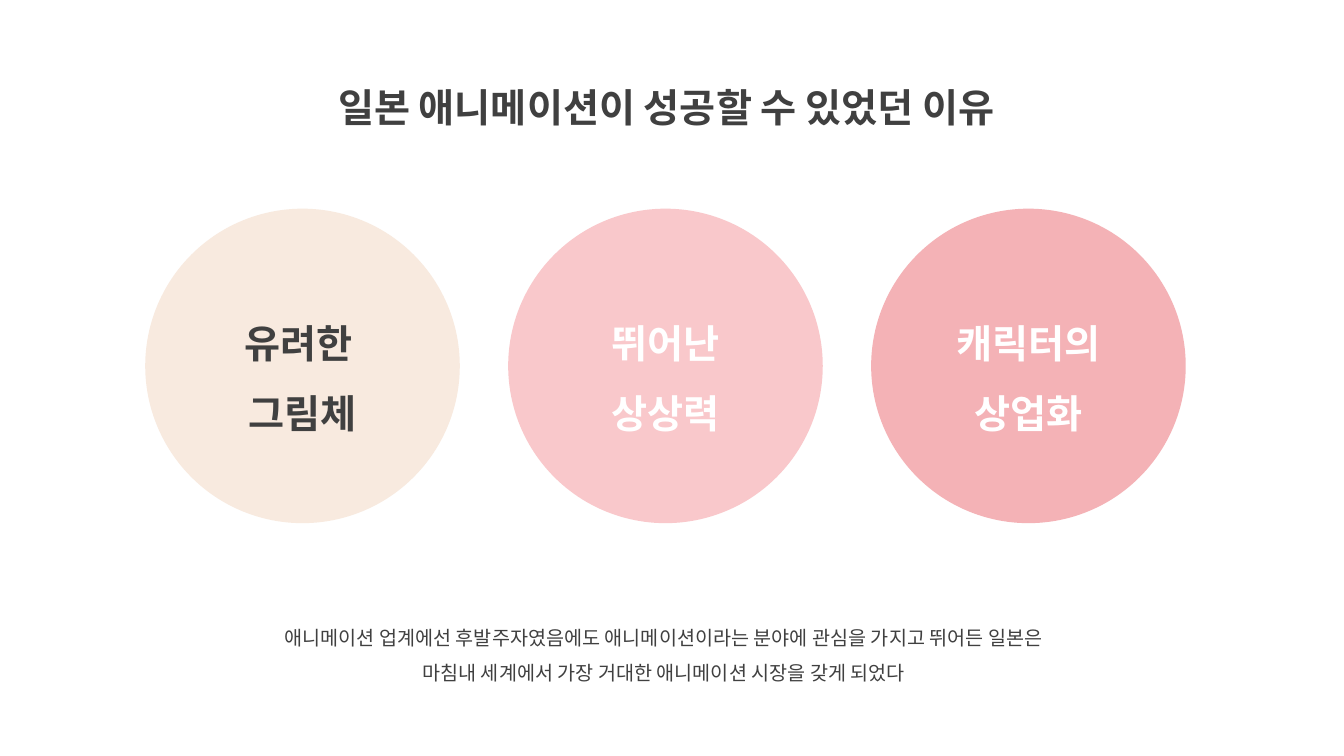
from lxml import etree
from pptx import Presentation
from pptx import util as u
from pptx.dml.color import RGBColor
from pptx.enum import shapes, text
from pptx.oxml import ns

FONT = "Noto Sans CJK KR"
DARK = RGBColor(0x40, 0x40, 0x40)
WHITE = RGBColor(0xFF, 0xFF, 0xFF)
CREAM = RGBColor(0xF8, 0xEA, 0xDF)
LIGHT_PINK = RGBColor(0xF9, 0xC8, 0xCB)
PINK = RGBColor(0xF4, 0xB2, 0xB6)

# Grid of the circles, in inches
FIRST_LEFT, CIRCLE_TOP, DIAMETER, COLUMN = 1.44, 2.07, 3.12, 3.6


def write(shape, content, size, color, bold):
    frame = shape.text_frame
    frame.word_wrap = True
    frame.text = content
    for paragraph in frame.paragraphs:
        paragraph.alignment = text.PP_ALIGN.CENTER
        paragraph.line_spacing = 1.5
        for run in paragraph.runs:
            run.font.size = u.Pt(size)
            run.font.bold = bold
            run.font.color.rgb = color
            run.font.name = FONT
            # Korean glyphs take the East Asian font
            properties = run._r.get_or_add_rPr()
            etree.SubElement(properties, ns.qn("a:ea"), typeface=FONT)


presentation = Presentation()
presentation.slide_width = u.Inches(13.33)
presentation.slide_height = u.Inches(7.5)
slide = presentation.slides.add_slide(presentation.slide_layouts[6])

# Title and closing sentence
captions = [
    (2.44, 0.54, 8.34, "일본 애니메이션이 성공할 수 있었던 이유", 28, True),
    (2.57, 6.04, 8.03,
     "애니메이션 업계에선 후발주자였음에도 애니메이션이라는 분야에 관심을 가지고 뛰어든 일본은 "
     "마침내 세계에서 가장 거대한 애니메이션 시장을 갖게 되었다", 14, False),
]
for left, top, width, content, size, bold in captions:
    box = slide.shapes.add_textbox(
        u.Inches(left), u.Inches(top), u.Inches(width), u.Inches(0.81))
    write(box, content, size, DARK, bold)
    box.text_frame.auto_size = text.MSO_AUTO_SIZE.SHAPE_TO_FIT_TEXT

# Three reasons
reasons = [
    ("유려한 \n그림체", CREAM, DARK),
    ("뛰어난\n상상력", LIGHT_PINK, WHITE),
    ("캐릭터의\n상업화", PINK, WHITE),
]
for index, (content, fill, color) in enumerate(reasons):
    circle = slide.shapes.add_shape(
        shapes.MSO_SHAPE.OVAL,
        u.Inches(FIRST_LEFT + index * COLUMN), u.Inches(CIRCLE_TOP),
        u.Inches(DIAMETER), u.Inches(DIAMETER))
    circle.shadow.inherit = False
    circle.fill.solid()
    circle.fill.fore_color.rgb = fill
    circle.line.fill.background()
    write(circle, content, 28, color, True)
    circle.text_frame.vertical_anchor = text.MSO_ANCHOR.MIDDLE

presentation.save("out.pptx")
